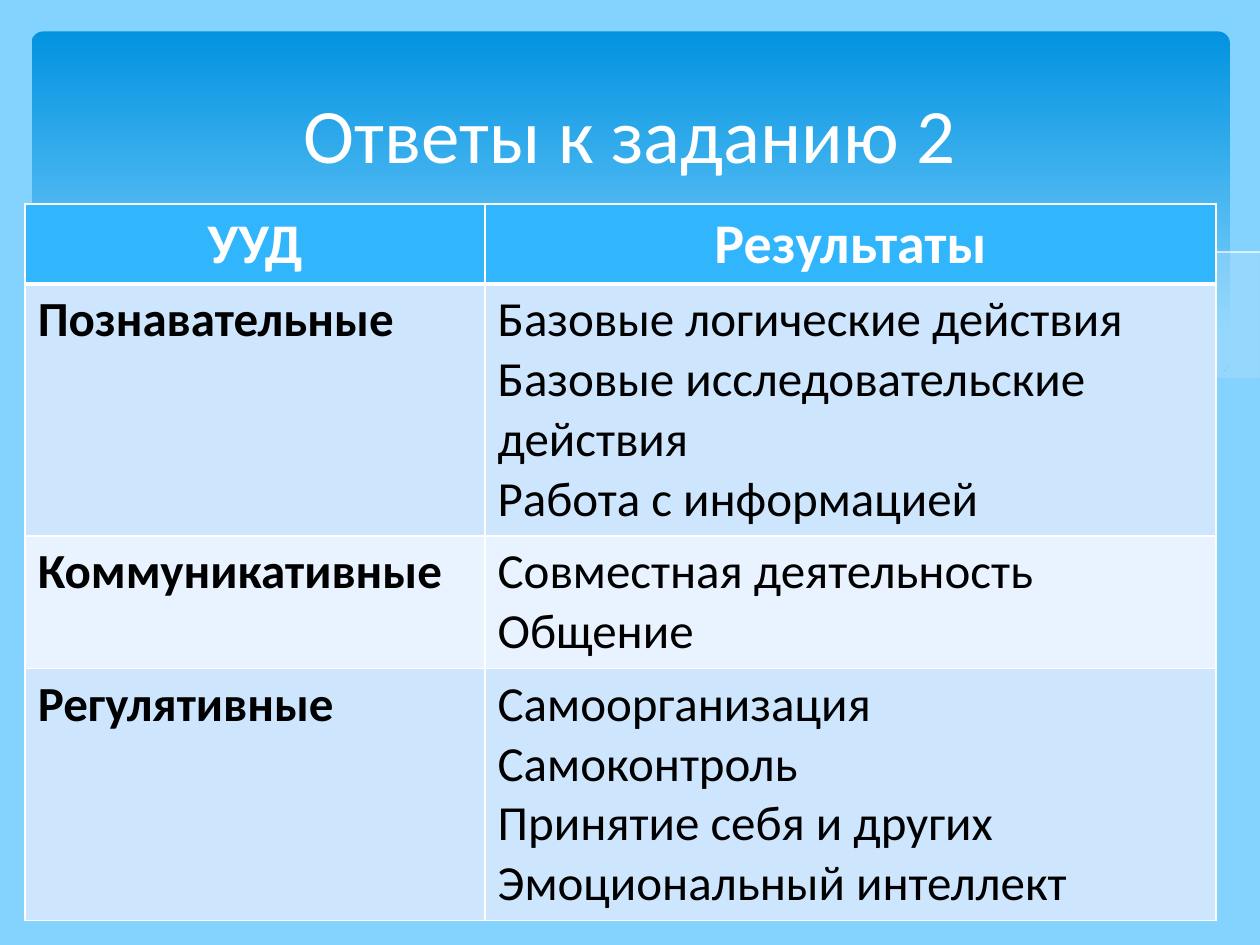
"""Build a slide with a title and a table of learning results over a wave banner."""
from lxml.etree import SubElement
from pptx import Presentation
from pptx.dml.color import RGBColor
from pptx.enum.shapes import MSO_SHAPE
from pptx.enum.text import MSO_ANCHOR, PP_ALIGN
from pptx.oxml import parse_xml
from pptx.oxml.ns import qn
from pptx.util import Inches, Pt

SKY = RGBColor(0x83, 0xD3, 0xFE)
DEEP = RGBColor(0x02, 0x93, 0xE0)
FOAM = RGBColor(0xC6, 0xE7, 0xFC)
HEAD = RGBColor(0x31, 0xB6, 0xFD)
BAND = RGBColor(0xCE, 0xE5, 0xFE)
PALE = RGBColor(0xE8, 0xF3, 0xFF)
WHITE = RGBColor(0xFF, 0xFF, 0xFF)
BLACK = RGBColor(0, 0, 0)
NS = "http://schemas.openxmlformats.org/drawingml/2006/main"


def add_run(para, text, size, color, bold=False):
    run = para.add_run()
    run.text = text
    run.font.name = "Calibri"
    run.font.size = Pt(size)
    run.font.bold = bold
    run.font.color.rgb = color


def add_wave(points, closed):
    pen = slide.shapes.build_freeform(*points[0], scale=Inches(1))
    pen.add_line_segments(points[1:], close=closed)
    wave = pen.convert_to_shape()
    wave.shadow.inherit = False
    return wave


prs = Presentation()
prs.slide_width, prs.slide_height = Inches(10), Inches(7.5)
slide = prs.slides.add_slide(prs.slide_layouts[6])
slide.background.fill.solid()
slide.background.fill.fore_color.rgb = SKY

banner = slide.shapes.add_shape(
    MSO_SHAPE.ROUNDED_RECTANGLE, Inches(0.25), Inches(0.25), Inches(9.51), Inches(2.7))
banner.adjustments[0] = 0.034
banner.shadow.inherit = False
banner.line.fill.background()
banner.fill.gradient()
banner.fill.gradient_angle = 270
for stop, color, place in zip(banner.fill.gradient_stops, (DEEP, SKY), (0, 0.9)):
    stop.color.rgb = color
    stop.position = place

crest = [(9.76, 2), (9.48, 2.04), (9.06, 2.13), (8.61, 2.23), (8.05, 2.37), (7.53, 2.48),
         (7.06, 2.57), (6.61, 2.65), (7.05, 2.71), (7.57, 2.76), (8.03, 2.78), (8.54, 2.76),
         (8.97, 2.7), (9.35, 2.62), (9.63, 2.52), (9.76, 2.47)]
swell = [(8.93, 2.73), (8.37, 2.65), (7.75, 2.54), (7.06, 2.4), (6.29, 2.22), (5.84, 2.11),
         (5.28, 2), (4.65, 1.91), (4.2, 1.87), (3.8, 1.85), (3.28, 1.87), (2.86, 1.91),
         (3.42, 1.99), (4.04, 2.11), (4.91, 2.32), (5.66, 2.48), (6.34, 2.61), (6.95, 2.7),
         (7.48, 2.76), (7.96, 2.78), (8.48, 2.77), (8.93, 2.73)]
ripple = [(3.09, 1.95), (3.44, 1.9), (3.87, 1.87), (4.33, 1.87), (4.89, 1.9), (5.56, 1.97),
          (6.36, 2.08), (7.27, 2.26), (8.31, 2.51), (9.07, 2.72)]
rise = [(6.13, 2.57), (6.72, 2.41), (7.48, 2.23), (8.06, 2.1), (8.66, 1.99), (9.24, 1.9),
        (9.75, 1.85)]
sea = [(9.77, 2.46), (9.5, 2.56), (9.1, 2.67), (8.63, 2.74), (8.09, 2.77), (7.44, 2.74),
       (6.68, 2.65), (5.79, 2.5), (4.75, 2.27), (3.91, 2.07), (3.16, 1.94), (2.5, 1.86),
       (1.93, 1.84), (1.46, 1.85), (1.06, 1.89), (0.67, 1.97), (0.4, 2.05), (0.23, 2.13),
       (0.23, 3.29), (9.77, 3.29)]

for points, alpha in ((crest, 29), (swell, 40)):
    wave = add_wave(points, True)
    wave.fill.solid()
    wave.fill.fore_color.rgb = FOAM
    wave.line.fill.background()
    tint = wave.fill._xPr.find(qn("a:solidFill"))[0]
    SubElement(tint, qn("a:alpha"), val=str(alpha * 1000))
for points in (ripple, rise):
    wave = add_wave(points, False)
    wave.fill.background()
    wave.line.color.rgb = WHITE
    wave.line.width = Pt(0)
wave = add_wave(sea, True)
wave.fill.solid()
wave.fill.fore_color.rgb = SKY
wave.line.fill.background()

title = slide.shapes.add_textbox(Inches(0.5), Inches(0.37), Inches(9), Inches(1.37))
frame = title.text_frame
frame.word_wrap = True
frame.vertical_anchor = MSO_ANCHOR.MIDDLE
frame.paragraphs[0].alignment = PP_ALIGN.CENTER
add_run(frame.paragraphs[0], "Ответы к заданию 2", 44, WHITE)

rows = [
    ("УУД", ["Результаты"], HEAD, 0.63),
    ("Познавательные", ["Базовые логические действия",
                        "Базовые исследовательские действия",
                        "Работа с информацией"], BAND, 2),
    ("Коммуникативные", ["Совместная деятельность", "Общение"], PALE, 1.05),
    ("Регулятивные", ["Самоорганизация", "Самоконтроль", "Принятие себя и других",
                      "Эмоциональный интеллект"], BAND, 2),
]
table = slide.shapes.add_table(
    len(rows), 2, Inches(0.2), Inches(1.62), Inches(9.45), Inches(5.68)).table
for col, width in zip(table.columns, (3.65, 5.8)):
    col.width = Inches(width)

for i, (name, results, color, height) in enumerate(rows):
    table.rows[i].height = Inches(height)
    for j, lines in enumerate(([name], results)):
        cell = table.cell(i, j)
        cell.fill.solid()
        cell.fill.fore_color.rgb = color
        for k, side in enumerate("LRTB"):
            thick = (side == "B" and i == 0) or (side == "T" and i == 1)
            edge = parse_xml(
                f'<a:ln{side} xmlns:a="{NS}" w="{Pt(3 if thick else 1)}"><a:solidFill>'
                f'<a:srgbClr val="{WHITE}"/></a:solidFill></a:ln{side}>')
            cell._tc.get_or_add_tcPr().insert(k, edge)
        for n, line in enumerate(lines):
            text = cell.text_frame
            para = text.paragraphs[0] if n == 0 else text.add_paragraph()
            para.alignment = PP_ALIGN.LEFT if i else PP_ALIGN.CENTER
            add_run(para, line, 28 if i else 32, BLACK if i else WHITE, i == 0 or j == 0)

prs.save("out.pptx")
